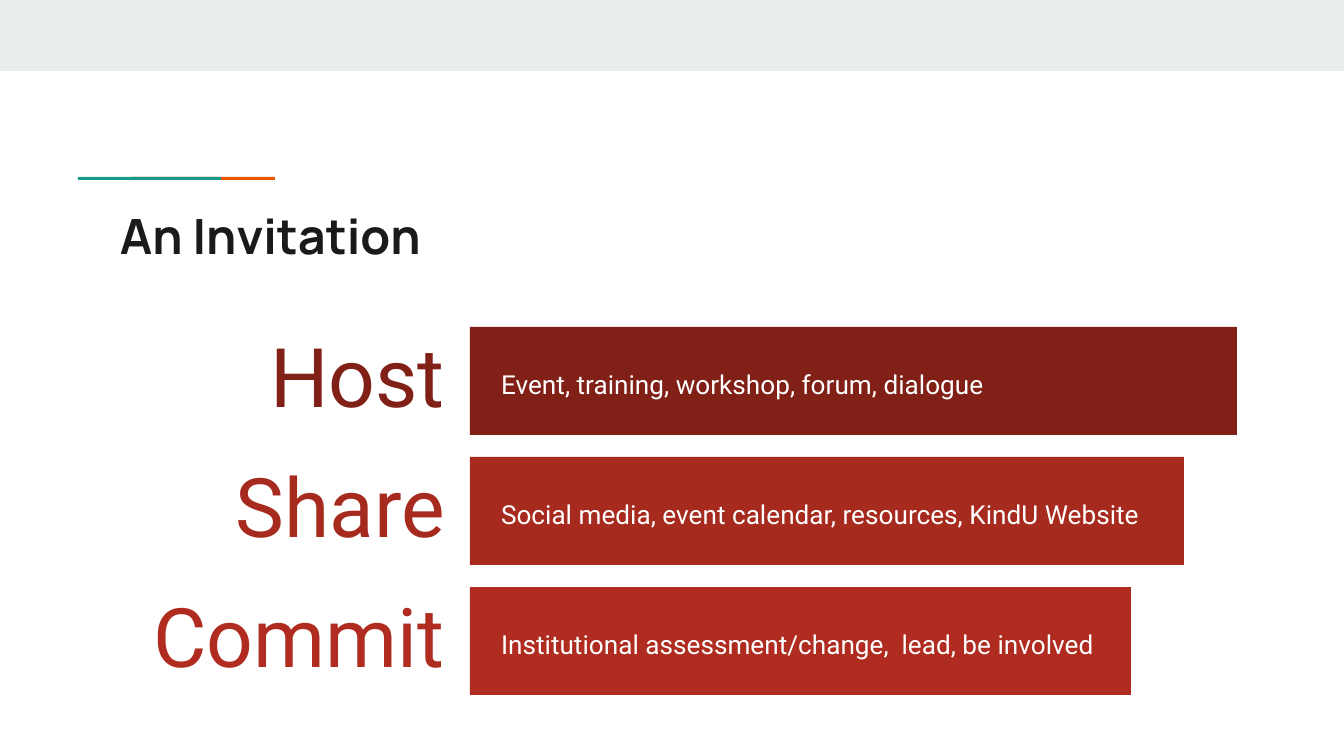
from pptx import Presentation
from pptx import util as u
from pptx.dml.color import RGBColor
from pptx.enum import shapes, text

PX = 914400 / 134.4  # EMU per px

WHITE = RGBColor(0xFF, 0xFF, 0xFF)
INK = RGBColor(0x1A, 0x1A, 0x1A)
BAND = RGBColor(0xE9, 0xED, 0xEE)
TEAL = RGBColor(0x1A, 0x99, 0x88)
ORANGE = RGBColor(0xEB, 0x56, 0x00)
DARK_RED = RGBColor(0x80, 0x20, 0x17)
RED = RGBColor(0xA7, 0x2A, 0x1E)
LIGHT_RED = RGBColor(0xB0, 0x2C, 0x20)


def px(*lengths):
    return [u.Emu(round(length * PX)) for length in lengths]


class SlideBuilder:
    body_font = "Roboto"
    title_font = "Manrope"

    def __init__(self, slide):
        self.slide = slide

    def rectangle(self, left, top, width, height, color):
        shape = self.slide.shapes.add_shape(
            shapes.MSO_SHAPE.RECTANGLE, *px(left, top, width, height))
        shape.shadow.inherit = False
        shape.fill.solid()
        shape.fill.fore_color.rgb = color
        shape.line.fill.background()

    def textbox(self, left, top, width, height, words, size, color,
                font=body_font, bold=False, align=text.PP_ALIGN.LEFT,
                anchor=text.MSO_ANCHOR.MIDDLE, spacing=1.0, inset=7):
        shape = self.slide.shapes.add_textbox(*px(left, top, width, height))
        frame = shape.text_frame
        frame.text = words
        frame.word_wrap = True
        frame.vertical_anchor = anchor
        frame.margin_left, frame.margin_right = px(13, 13)
        frame.margin_top, frame.margin_bottom = px(inset, inset)
        paragraph = frame.paragraphs[0]
        paragraph.alignment = align
        paragraph.line_spacing = spacing
        run_font = paragraph.runs[0].font
        run_font.name = font
        run_font.size = u.Pt(size)
        run_font.bold = bold
        run_font.color.rgb = color


def main():
    presentation = Presentation()
    presentation.slide_width, presentation.slide_height = px(1344, 756)
    slide = presentation.slides.add_slide(presentation.slide_layouts[6])
    builder = SlideBuilder(slide)

    # Top band and two-colour accent line
    builder.rectangle(0, 0, 1344, 71, BAND)
    builder.rectangle(133, 177, 142, 3, ORANGE)
    builder.rectangle(78, 177, 143, 3, TEAL)

    # Title
    builder.textbox(107, 193, 1130, 79, "An Invitation", 26, INK,
                    font=builder.title_font, bold=True,
                    anchor=text.MSO_ANCHOR.TOP, inset=13)

    # Rows: label, label width, detail, detail width and height, colour
    rows = [
        ("Host", 294, "Event, training, workshop, forum, dialogue",
         700, 84, DARK_RED),
        ("Share", 399, "Social media, event calendar, resources, KindU Website",
         687, 48, RED),
        ("Commit", 329, "Institutional assessment/change,  lead, be involved",
         642, 48, LIGHT_RED),
    ]
    bar_height, label_height, label_right = 108, 92, 458
    for index, (label, label_width, detail, width, height, color) in enumerate(rows):
        top = 327 + 130 * index
        middle = top + bar_height // 2
        builder.textbox(label_right - label_width, middle - label_height // 2,
                        label_width, label_height, label, 44, color,
                        align=text.PP_ALIGN.RIGHT, spacing=0.9)
        builder.rectangle(470, top, 767 - 53 * index, bar_height, color)
        builder.textbox(488, middle + 1 - height // 2, width, height,
                        detail, 14, WHITE, spacing=1.15)

    presentation.save("out.pptx")


if __name__ == "__main__":
    main()
